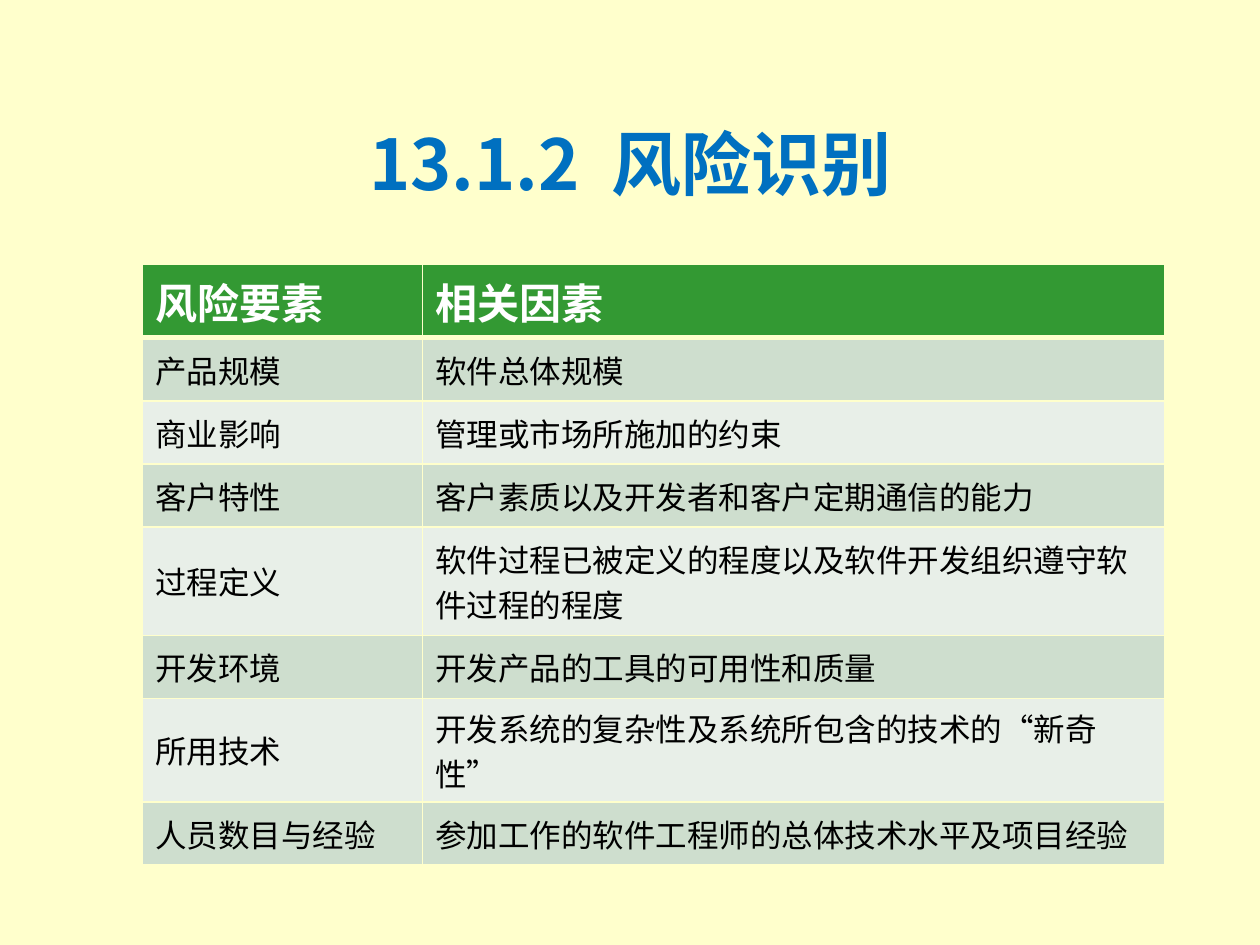
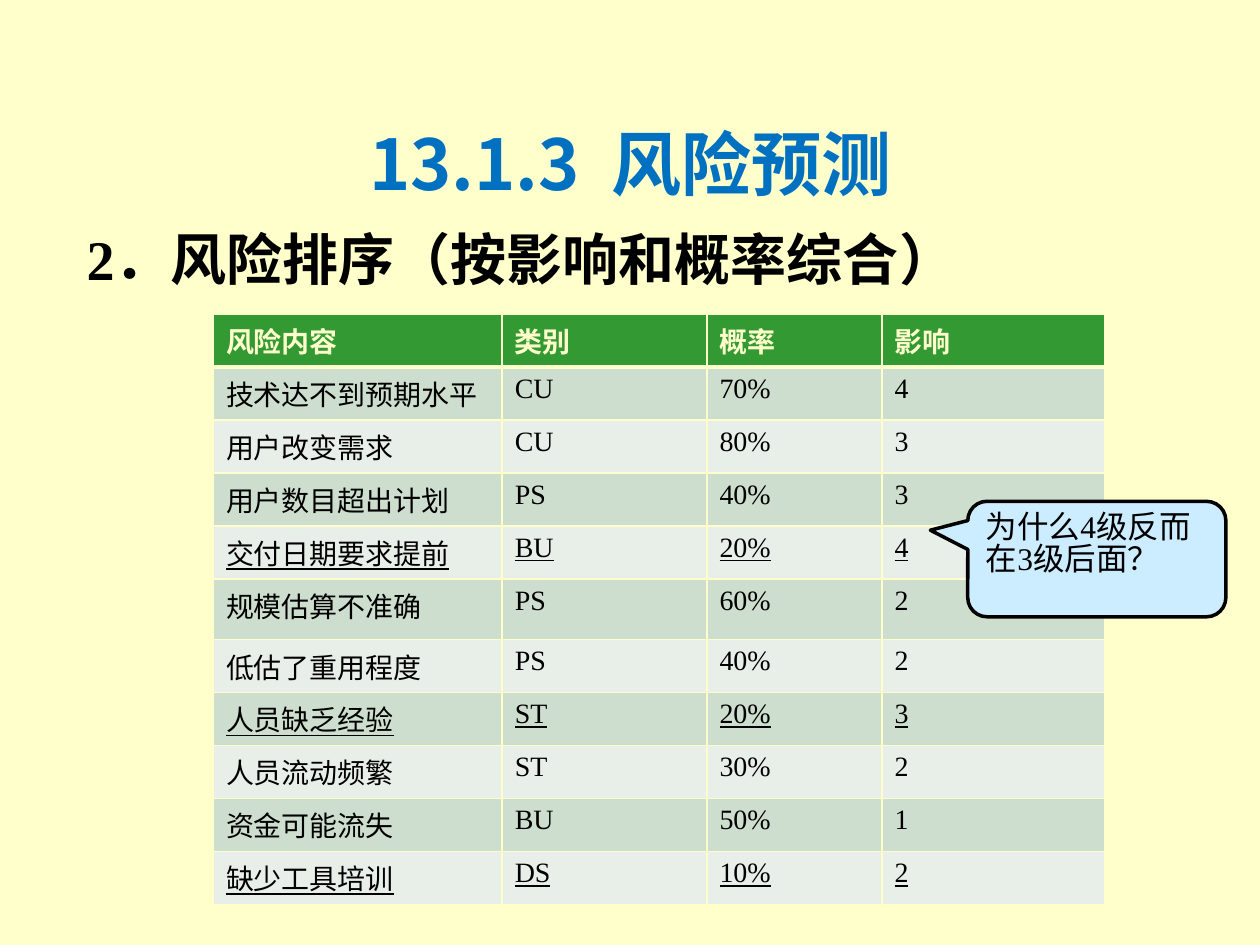
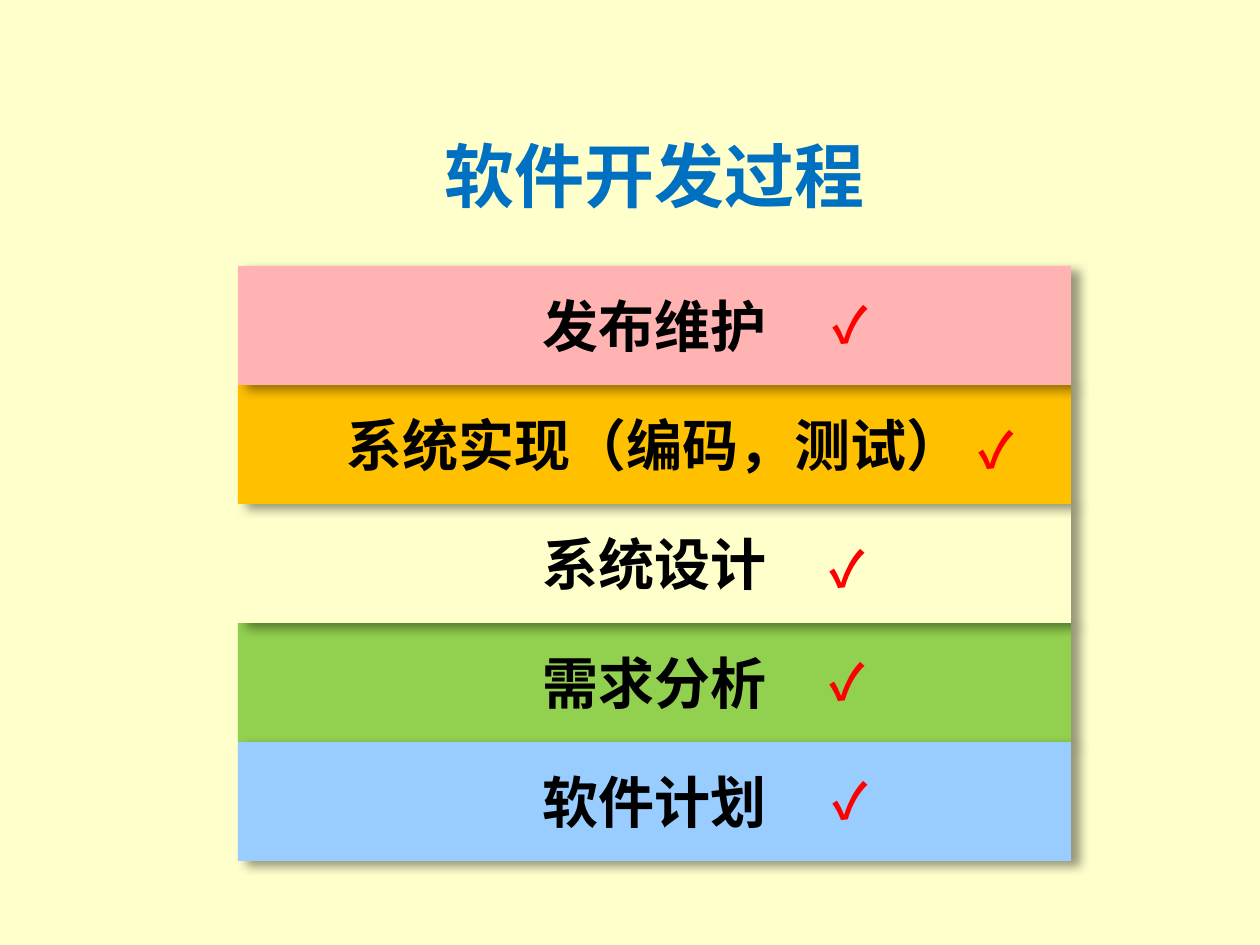
from dataclasses import dataclass

from lxml import etree
from pptx import Presentation
from pptx.dml.color import RGBColor
from pptx.enum.shapes import MSO_SHAPE
from pptx.enum.text import MSO_ANCHOR, PP_ALIGN
from pptx.oxml.ns import qn
from pptx.util import Pt

RECTANGLE = MSO_SHAPE.RECTANGLE
CALLOUT = MSO_SHAPE.ROUNDED_RECTANGULAR_CALLOUT
TOP, MIDDLE = MSO_ANCHOR.TOP, MSO_ANCHOR.MIDDLE
LEFT, CENTER = PP_ALIGN.LEFT, PP_ALIGN.CENTER

# Shared look
SANS, SERIF = "Noto Sans CJK SC", "Times New Roman"
CREAM, BLUE, GREEN = "FFFFCC", "0070C0", "339933"
BLACK, WHITE, RED = "000000", "FFFFFF", "FF0000"
ROW_FILLS = ("CEDECE", "E8EFE8")
TITLE_ONLY = 5
TITLE_BOX = (54, 48, 612, 90)


@dataclass
class Style:
    size: float
    font: str = SERIF
    color: str = BLACK
    bold: bool = False
    underline: bool = False
    align: PP_ALIGN = LEFT


@dataclass
class TableSpec:
    left: float
    top: float
    widths: list[float]
    heights: list[float]
    header: Style
    body_size: float
    anchor: MSO_ANCHOR
    rows: list[tuple]
    underlined: tuple = ()


@dataclass
class Stage:
    name: str
    fill: str
    check_left: float
    check_drop: float


TITLE = Style(40, SANS, BLUE, True, align=CENTER)
STAGE_TEXT = Style(32, SANS, BLACK, True, align=CENTER)
CHECK_TEXT = Style(28, SANS, RED, True, align=CENTER)

RISK_FACTORS = TableSpec(
    81.5, 151, [160, 424], [36] * 4 + [62] + [36] * 3,
    Style(24, color=WHITE, bold=True), 18, MIDDLE,
    [
        ("风险要素", "相关因素"),
        ("产品规模", "软件总体规模"),
        ("商业影响", "管理或市场所施加的约束"),
        ("客户特性", "客户素质以及开发者和客户定期通信的能力"),
        ("过程定义", "软件过程已被定义的程度以及软件开发组织遵守软件过程的程度"),
        ("开发环境", "开发产品的工具的可用性和质量"),
        ("所用技术", "开发系统的复杂性及系统所包含的技术的“新奇性”"),
        ("人员数目与经验", "参加工作的软件工程师的总体技术水平及项目经验"),
    ],
)

RISK_RANKING = TableSpec(
    122, 179.5, [165, 117, 100, 127.5], [29.5] * 5 + [34.5] + [29.5] * 5,
    Style(16, color=CREAM, bold=True), 16, TOP,
    [
        ("风险内容", "类别", "概率", "影响"),
        ("技术达不到预期水平", "CU", "70%", "4"),
        ("用户改变需求", "CU", "80%", "3"),
        ("用户数目超出计划", "PS", "40%", "3"),
        ("交付日期要求提前", "BU", "20%", "4"),
        ("规模估算不准确", "PS", "60%", "2"),
        ("低估了重用程度", "PS", "40%", "2"),
        ("人员缺乏经验", "ST", "20%", "3"),
        ("人员流动频繁", "ST", "30%", "2"),
        ("资金可能流失", "BU", "50%", "1"),
        ("缺少工具培训", "DS", "10%", "2"),
    ],
    underlined=(4, 7, 10),
)

# Stages from top to bottom
STAGES = [
    Stage("发布维护", "FFB3B3", 468, 13),
    Stage("系统实现（编码，测试）", "FFC000", 551, 16),
    Stage("系统设计", CREAM, 466, 16),
    Stage("需求分析", "92D050", 466, 13),
    Stage("软件计划", "99CCFF", 468, 13),
]
STAGE_ORDER = (3, 2, 1, 0, 4)  # back to front
STAGE_LEFT, STAGE_TOP, STAGE_WIDTH, STAGE_HEIGHT = 136, 152, 476, 68


def rgb(color: str) -> RGBColor:
    return RGBColor.from_string(color)


def points(*values: float) -> list:
    return [Pt(v) for v in values]


def write(tf, text: str, style: Style, anchor=TOP):
    tf.text = text
    tf.vertical_anchor = anchor
    p = tf.paragraphs[0]
    p.alignment = style.align
    font = p.font
    font.size = Pt(style.size)
    font.bold = style.bold
    font.underline = style.underline
    font.color.rgb = rgb(style.color)
    font.name = style.font
    # East Asian characters always use the sans face
    props = p._p.pPr.find(qn("a:defRPr"))
    etree.SubElement(props, qn("a:ea")).set("typeface", SANS)
    return p


def add_slide(prs, title: str, box: tuple = TITLE_BOX):
    s = prs.slides.add_slide(prs.slide_layouts[TITLE_ONLY])
    sp = s.shapes.title
    sp.left, sp.top, sp.width, sp.height = points(*box)
    write(sp.text_frame, title, TITLE, MIDDLE)
    return s


def add_text(s, box: tuple, text: str, style: Style, wrap: bool = True) -> None:
    tf = s.shapes.add_textbox(*points(*box)).text_frame
    tf.word_wrap = wrap
    write(tf, text, style)


def add_box(s, kind, box: tuple, fill: str):
    sp = s.shapes.add_shape(kind, *points(*box))
    sp.shadow.inherit = False
    sp.fill.solid()
    sp.fill.fore_color.rgb = rgb(fill)
    sp.line.fill.background()
    sp.text_frame.word_wrap = True
    return sp


def add_shadow(sp) -> None:
    effects = sp._element.spPr.find(qn("a:effectLst"))
    shadow = etree.SubElement(effects, qn("a:outerShdw"), blurRad=str(Pt(6)),
                              dist=str(Pt(5)), dir=str(25 * 60000),
                              algn="ctr", rotWithShape="0")
    color = etree.SubElement(shadow, qn("a:srgbClr"), val=BLACK)
    etree.SubElement(color, qn("a:alpha"), val="40000")


def set_borders(cell, top: float, bottom: float) -> None:
    tc_pr = cell._tc.get_or_add_tcPr()
    for side, width in (("L", 1), ("R", 1), ("T", top), ("B", bottom)):
        ln = etree.SubElement(tc_pr, qn(f"a:ln{side}"), w=str(Pt(width)))
        fill = etree.SubElement(ln, qn("a:solidFill"))
        etree.SubElement(fill, qn("a:srgbClr"), val=CREAM)


def add_table(s, spec: TableSpec) -> None:
    box = (spec.left, spec.top, sum(spec.widths), sum(spec.heights))
    table = s.shapes.add_table(len(spec.rows), len(spec.widths), *points(*box)).table
    table.first_row = table.horz_banding = False
    for column, width in zip(table.columns, spec.widths):
        column.width = Pt(width)
    for i, values in enumerate(spec.rows):
        table.rows[i].height = Pt(spec.heights[i])
        style = Style(spec.body_size, underline=i in spec.underlined) if i else spec.header
        fill = ROW_FILLS[(i - 1) % 2] if i else GREEN
        for j, value in enumerate(values):
            cell = table.cell(i, j)
            # A thick rule separates the header from the body
            set_borders(cell, top=3 if i == 1 else 1, bottom=3 if i == 0 else 1)
            cell.fill.solid()
            cell.fill.fore_color.rgb = rgb(fill)
            write(cell.text_frame, value, style)
            cell.vertical_anchor = spec.anchor


def risk_identification(prs) -> None:
    s = add_slide(prs, "13.1.2  风险识别")
    add_table(s, RISK_FACTORS)


def risk_prediction(prs) -> None:
    s = add_slide(prs, "13.1.3  风险预测")
    add_table(s, RISK_RANKING)
    add_text(s, (42.5, 125, 612, 66), "2．风险排序（按影响和概率综合）", Style(32, bold=True))
    # Question about the ranking
    sp = add_box(s, CALLOUT, (553, 286.5, 147.5, 66), "CCECFF")
    for i, value in enumerate((-0.645, -0.25, 0.167)):
        sp.adjustments[i] = value
    sp.line.color.rgb = rgb(BLACK)
    sp.line.width = Pt(2)
    p = write(sp.text_frame, "为什么4级反而在3级后面？", Style(18))
    p.line_spacing = 0.85


def development_process(prs) -> None:
    s = add_slide(prs, "软件开发过程", (76, 72, 596, 55.5))
    for i in STAGE_ORDER:
        top = STAGE_TOP + i * STAGE_HEIGHT
        sp = add_box(s, RECTANGLE, (STAGE_LEFT, top, STAGE_WIDTH, STAGE_HEIGHT),
                     STAGES[i].fill)
        add_shadow(sp)
        write(sp.text_frame, STAGES[i].name, STAGE_TEXT, MIDDLE)
    # Check marks lie above all stages
    for i, stage in enumerate(STAGES):
        top = STAGE_TOP + i * STAGE_HEIGHT + stage.check_drop
        add_text(s, (stage.check_left, top, 36, 41), "✓", CHECK_TEXT, wrap=False)


def main() -> None:
    prs = Presentation()
    prs.slide_width, prs.slide_height = Pt(720), Pt(540)
    background = prs.slide_master.background.fill
    background.solid()
    background.fore_color.rgb = rgb(CREAM)
    risk_identification(prs)
    risk_prediction(prs)
    development_process(prs)
    prs.save("out.pptx")


if __name__ == "__main__":
    main()
